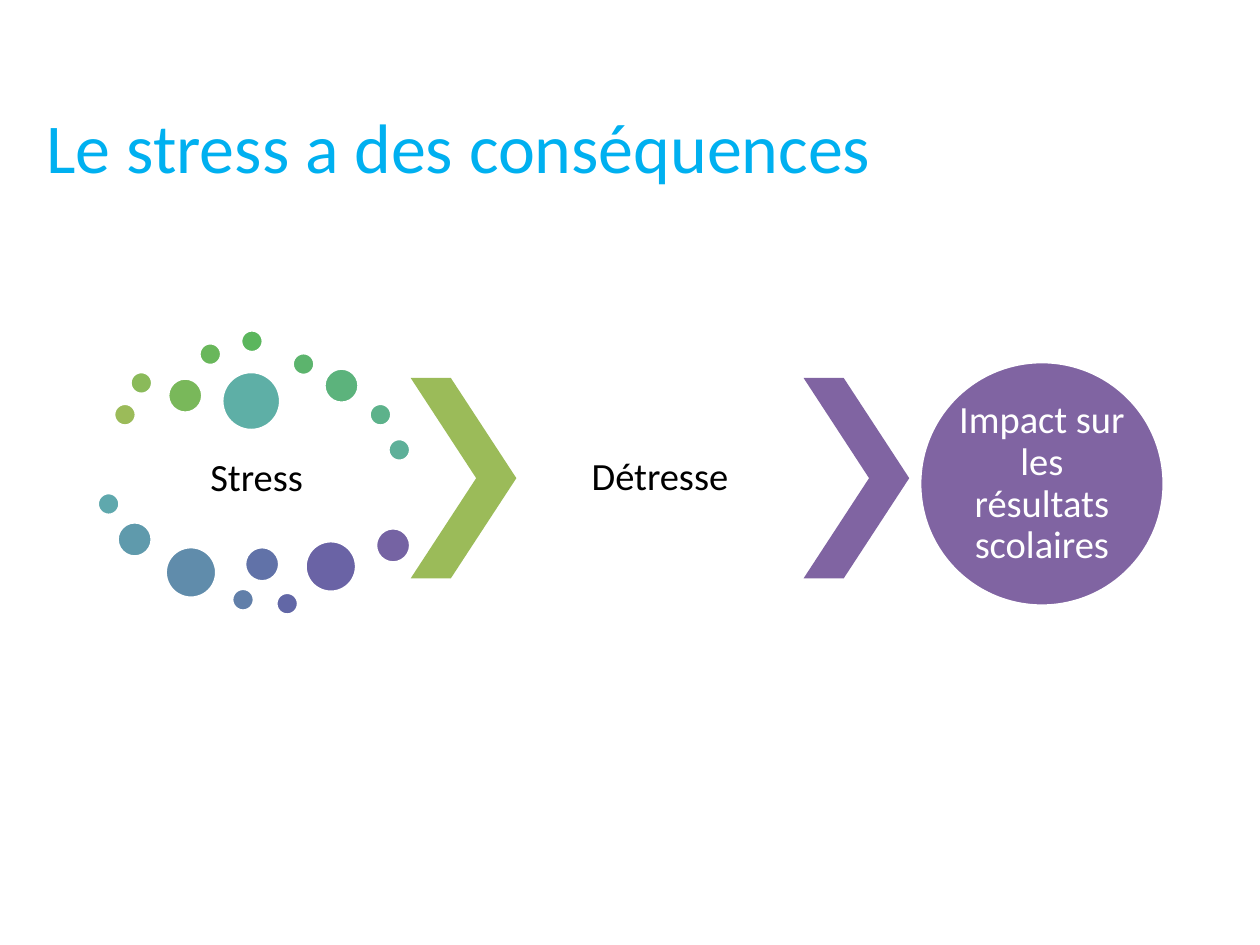
import dataclasses

import pptx
import pptx.dml.color
import pptx.enum.shapes
import pptx.enum.text
import pptx.util

Cm = pptx.util.Cm
Shape = pptx.enum.shapes.MSO_SHAPE
Align = pptx.enum.text.PP_ALIGN
Anchor = pptx.enum.text.MSO_ANCHOR


@dataclasses.dataclass(frozen=True)
class Theme:
    font: str = "Calibri"
    title: str = "00B0F0"
    dark: str = "000000"
    light: str = "FFFFFF"
    green: str = "9BBB59"
    purple: str = "8064A2"
    large: int = 40
    small: int = 22
    edge: int = 2
    dots: tuple = (
        "9BBB59", "8ABA5A", "79B85A", "69B75B", "5BB65D", "5CB46D",
        "5CB37C", "5DB28B", "5EB099", "5EAFA6", "5FA8AD", "5F9AAC",
        "608CAB", "617FA9", "6172A8", "6267A6", "6A63A5", "7563A3",
    )


# Dot diameters, then left, top and diameter of each dot, in cm
TINY, SMALL, MID, BIG = 0.46, 0.71, 1.04, 1.19
DOTS = (
    (2.29, 8.13, TINY), (2.62, 7.49, TINY), (3.38, 7.62, SMALL),
    (4.01, 6.91, TINY), (4.85, 6.65, TINY), (5.89, 7.11, TINY),
    (6.53, 7.42, SMALL), (7.44, 8.13, TINY), (7.82, 8.84, TINY),
    (4.47, 7.49, BIG), (1.96, 9.93, TINY), (2.36, 10.52, SMALL),
    (3.33, 11.02, MID), (4.67, 11.86, TINY), (4.93, 11.02, SMALL),
    (5.56, 11.94, TINY), (6.15, 10.9, MID), (7.57, 10.64, SMALL),
)


def paint(code):
    return pptx.dml.color.RGBColor.from_string(code)


def apply(target, values):
    for name, value in values.items():
        setattr(target, name, value)


class Sheet:
    """Draws styled elements on one slide; lengths are in cm."""

    def __init__(self, slide, theme):
        self.slide = slide
        self.theme = theme

    def letter(self, shape, text, color, size, frame, para):
        box = shape.text_frame
        apply(box, {"word_wrap": True, **frame})
        line = box.paragraphs[0]
        line.text = text
        apply(line, para)
        apply(line.font, {"name": self.theme.font, "size": pptx.util.Pt(size)})
        line.font.color.rgb = paint(color)

    def center(self, shape, text, color, inset):
        sides = ("left", "top", "right", "bottom")
        frame = {f"margin_{side}": Cm(inset) for side in sides}
        frame["vertical_anchor"] = Anchor.MIDDLE
        para = {"alignment": Align.CENTER, "line_spacing": 0.9}
        self.letter(shape, text, color, self.theme.small, frame, para)

    def box(self, *area):
        return self.slide.shapes.add_textbox(*map(Cm, area))

    def title(self, text, *area):
        self.letter(self.box(*area), text, self.theme.title, self.theme.large,
                    {"vertical_anchor": Anchor.TOP}, {"alignment": Align.LEFT})

    def label(self, text, *area):
        self.center(self.box(*area), text, self.theme.dark, 0.08)

    def shape(self, kind, fill, *area):
        item = self.slide.shapes.add_shape(kind, *map(Cm, area))
        item.shadow.inherit = False
        item.fill.solid()
        item.fill.fore_color.rgb = paint(fill)
        item.line.fill.background()
        return item

    def disc(self, fill, left, top, size):
        item = self.shape(Shape.OVAL, fill, left, top, size, size)
        item.line.color.rgb = paint(self.theme.light)
        item.line.width = pptx.util.Pt(self.theme.edge)
        return item

    def arrow(self, fill, *area):
        item = self.shape(Shape.CHEVRON, fill, *area)
        item.adjustments[0] = 0.62


def main():
    deck = pptx.Presentation()
    apply(deck, {"slide_width": Cm(25.4), "slide_height": Cm(19.05)})
    theme = Theme()
    sheet = Sheet(deck.slides.add_slide(deck.slide_layouts[6]), theme)

    sheet.title("Le stress a des conséquences", 0.69, 1.96, 20.62, 3.28)

    sheet.label("Stress", 2.29, 8.71, 5.77, 1.9)
    for fill, dot in zip(theme.dots, DOTS):
        sheet.disc(fill, *dot)

    left, top, wide, high, gap = 8.28, 7.62, 2.13, 4.04, 5.79
    sheet.arrow(theme.green, left, top, wide, high)
    sheet.label("Détresse", left + wide, top, gap, high)
    sheet.arrow(theme.purple, left + wide + gap, top, wide, high)

    result = sheet.disc(theme.purple, 18.54, 7.29, 4.93)
    sheet.center(result, "Impact sur les résultats scolaires", theme.light, 0)

    deck.save("out.pptx")


if __name__ == "__main__":
    main()
